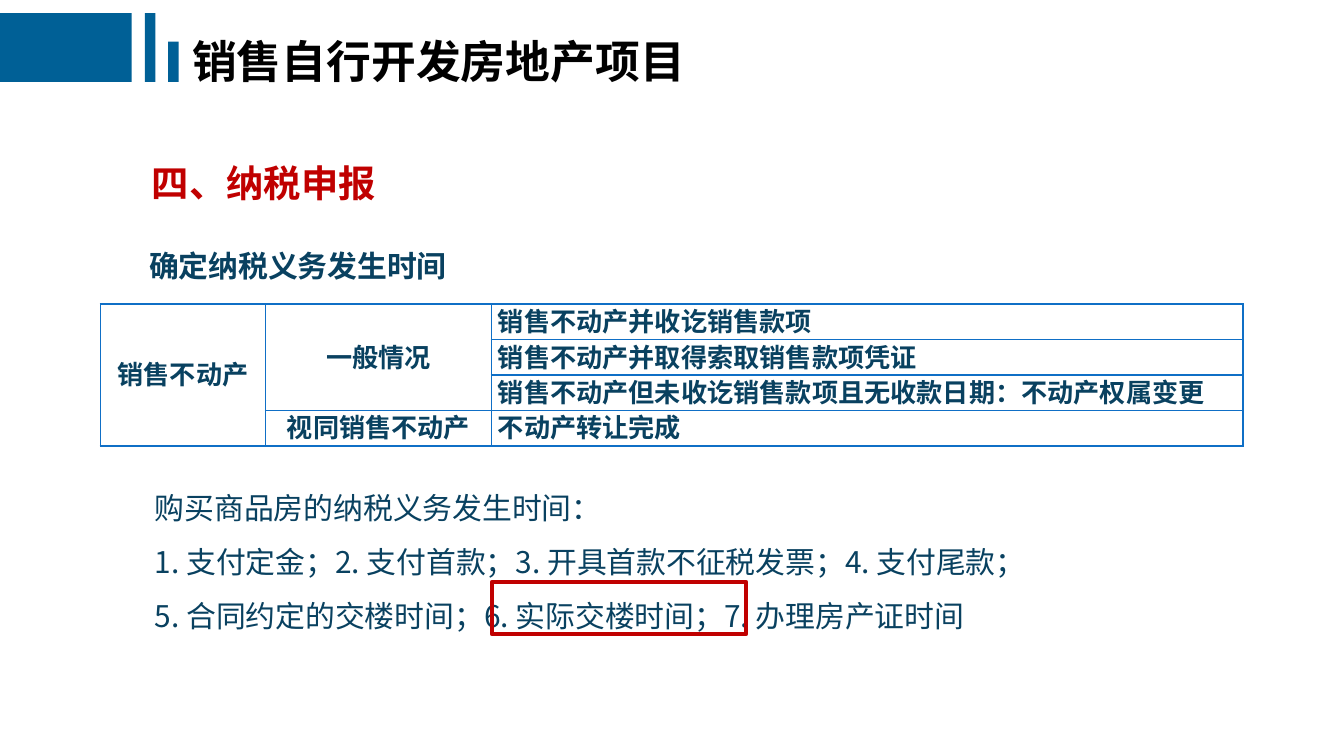
from lxml import etree
from pptx import Presentation
from pptx.dml.color import RGBColor
from pptx.enum.shapes import MSO_SHAPE
from pptx.enum.text import MSO_ANCHOR, PP_ALIGN
from pptx.oxml.ns import qn
from pptx.util import Cm, Pt

RECTANGLE = MSO_SHAPE.RECTANGLE
MIDDLE = MSO_ANCHOR.MIDDLE
LEFT = PP_ALIGN.LEFT
CENTER = PP_ALIGN.CENTER

FONT = "Noto Sans CJK SC"
BLUE = "006096"
NAVY = "094160"
RED = "C00000"
BORDER = "0F6FC6"

BARS = [(0, 0.25, 2.49, 1.3), (2.74, 0.25, 0.2, 1.3), (3.18, 0.79, 0.2, 0.76)]
COLUMN_WIDTHS = [3.12, 4.27, 14.2]
ROW_HEIGHT = 0.67
ROWS = [
    ["销售不动产", "一般情况", "销售不动产并收讫销售款项"],
    ["", "", "销售不动产并取得索取销售款项凭证"],
    ["", "", "销售不动产但未收讫销售款项且无收款日期：不动产权属变更"],
    ["", "视同销售不动产", "不动产转让完成"],
]
MERGES = [((0, 0), (3, 0)), ((0, 1), (2, 1))]
BODY = [
    "购买商品房的纳税义务发生时间：",
    "1. 支付定金；2. 支付首款；3. 开具首款不征税发票；4. 支付尾款；",
    "5. 合同约定的交楼时间；6. 实际交楼时间；7. 办理房产证时间",
]


def color(value):
    return RGBColor.from_string(value)


def set_attributes(target, values):
    for name, value in values.items():
        setattr(target, name, value)


def write_paragraph(paragraph, text, size, text_color, bold, spacing, alignment=LEFT):
    set_attributes(paragraph, {"alignment": alignment, "line_spacing": spacing})
    run = paragraph.add_run()
    run.text = text
    set_attributes(run.font, {"name": FONT, "size": Pt(size), "bold": bold})
    run.font.color.rgb = color(text_color)
    east_asian = etree.SubElement(run.font._element, qn("a:ea"))
    east_asian.set("typeface", FONT)


def set_frame(frame, left_margin=0):
    set_attributes(frame, {
        "word_wrap": True, "margin_left": Cm(left_margin), "margin_right": 0,
        "margin_top": 0, "margin_bottom": 0,
    })


def add_rectangle(slide, box, fill=None, line=None, line_width=0):
    shape = slide.shapes.add_shape(RECTANGLE, *map(Cm, box))
    shape.shadow.inherit = False
    if fill:
        shape.fill.solid()
        shape.fill.fore_color.rgb = color(fill)
    else:
        shape.fill.background()
    if line:
        shape.line.color.rgb = color(line)
        shape.line.width = Pt(line_width)
    else:
        shape.line.fill.background()


def add_title(slide, text):
    title = slide.shapes.title
    box = map(Cm, (3.38, 0.5, 15.72, 1.3))
    set_attributes(title, dict(zip(("left", "top", "width", "height"), box)))
    set_frame(title.text_frame, 0.25)
    title.text_frame.vertical_anchor = MIDDLE
    write_paragraph(title.text_frame.paragraphs[0], text, 24, "000000", True, 1.0)


def add_text(slide, box, lines, size, text_color, bold, spacing):
    frame = slide.shapes.add_textbox(*map(Cm, box)).text_frame
    set_frame(frame)
    for index, line in enumerate(lines):
        paragraph = frame.add_paragraph() if index else frame.paragraphs[0]
        write_paragraph(paragraph, line, size, text_color, bold, Pt(spacing))


def add_borders(cell):
    properties = cell._tc.get_or_add_tcPr()
    for side in ("lnL", "lnR", "lnT", "lnB"):
        line = etree.SubElement(properties, qn(f"a:{side}"), w=str(Pt(1)))
        fill = etree.SubElement(line, qn("a:solidFill"))
        etree.SubElement(fill, qn("a:srgbClr"), val=BORDER)


def add_table(slide, left, top):
    size = (sum(COLUMN_WIDTHS), ROW_HEIGHT * len(ROWS))
    frame = slide.shapes.add_table(
        len(ROWS), len(COLUMN_WIDTHS), *map(Cm, (left, top, *size)))
    table = frame.table
    set_attributes(table, {"first_row": False, "horz_banding": False})
    for column, width in zip(table.columns, COLUMN_WIDTHS):
        column.width = Cm(width)
    for row_index, texts in enumerate(ROWS):
        table.rows[row_index].height = Cm(ROW_HEIGHT)
        for column_index, text in enumerate(texts):
            cell = table.cell(row_index, column_index)
            is_detail = column_index == 2
            set_attributes(cell, {
                "margin_left": Cm(0.12 if is_detail else 0.02),
                "margin_right": Cm(0.02), "margin_top": Cm(0.02),
                "margin_bottom": 0, "vertical_anchor": MIDDLE,
            })
            add_borders(cell)
            cell.fill.background()
            paragraph = cell.text_frame.paragraphs[0]
            paragraph.font.size = Pt(14)
            if text:
                write_paragraph(paragraph, text, 14, NAVY, True, Pt(18),
                                LEFT if is_detail else CENTER)
            else:
                paragraph.line_spacing = Pt(18)
    for first, last in MERGES:
        table.cell(*first).merge(table.cell(*last))


def main():
    presentation = Presentation()
    set_attributes(presentation, {"slide_width": Cm(25.4), "slide_height": Cm(14.29)})
    slide = presentation.slides.add_slide(presentation.slide_layouts[5])
    for bar in BARS:
        add_rectangle(slide, bar, fill=BLUE)
    add_title(slide, "销售自行开发房地产项目")
    add_text(slide, (2.87, 2.82, 18, 1.06), ["四、纳税申报"], 20, RED, True, 30)
    add_text(slide, (2.82, 4.35, 18, 1.02), ["确定纳税义务发生时间"], 16, NAVY, True, 28.8)
    add_table(slide, 1.9, 5.75)
    add_text(slide, (2.93, 8.92, 20.4, 3.05), BODY, 16, NAVY, False, 28.8)
    add_rectangle(slide, (9.3, 11, 4.8, 0.99), line=RED, line_width=2.25)
    presentation.save("out.pptx")


if __name__ == "__main__":
    main()
